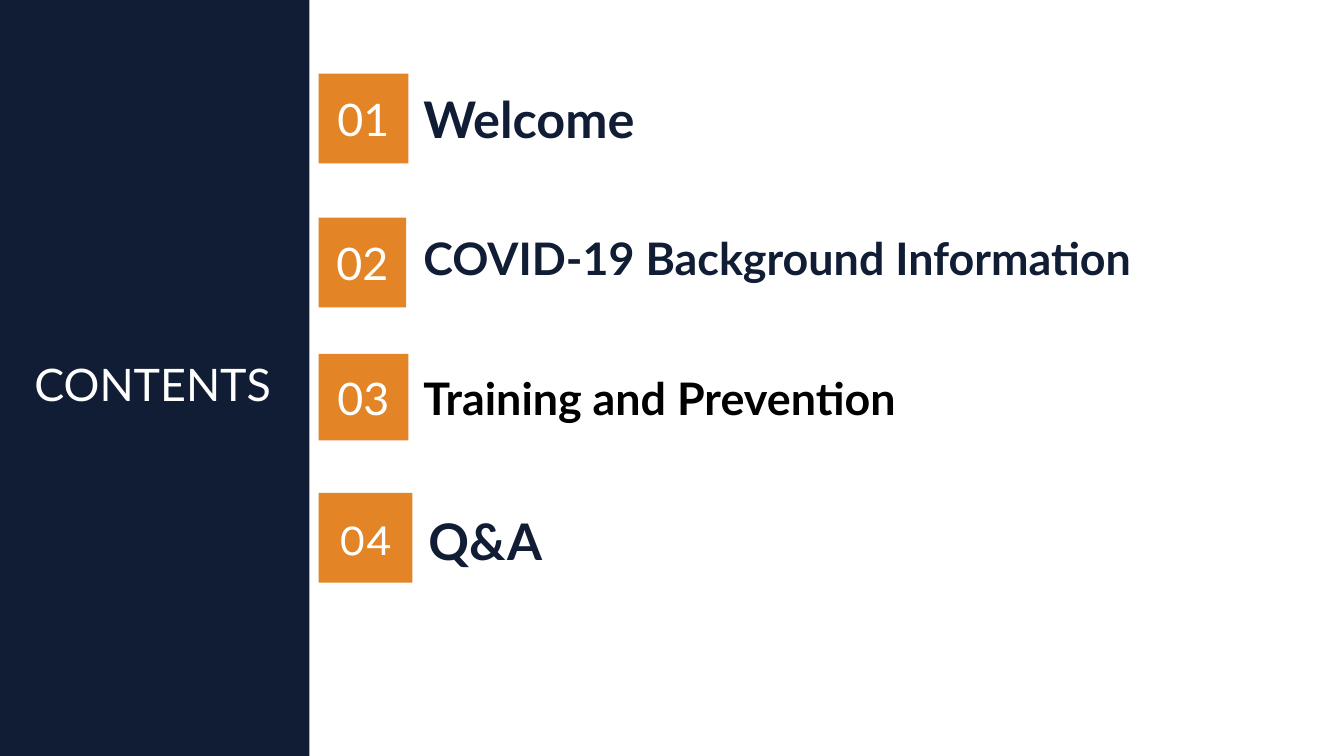
from pptx import Presentation
from pptx.dml.color import RGBColor
from pptx.enum.shapes import MSO_SHAPE as Shape
from pptx.enum.text import MSO_ANCHOR as Anchor, PP_ALIGN as Align

PX = 9144
NAVY, ORANGE, WHITE, BLACK = "101D35", "E38526", "FFFFFF", "000000"
AGENDA = [
    ("01", "Lato", (316, 73, 89, 89), "Welcome", 36, NAVY, (410, 73, 873, 89)),
    ("02", "Lato", (316, 216, 87, 89), "COVID-19 Background Information", 32, NAVY, (410, 211, 860, 89)),
    ("03", "Lato", (316, 351, 89, 86), "Training and Prevention", 32, BLACK, (410, 351, 873, 86)),
    ("04", "Karla", (316, 489, 93, 89), "Q&A", 36, NAVY, (415, 495, 910, 83)),
]


def rgb(value):
    """Turn a hex string into a colour."""
    return RGBColor.from_string(value)


def emu(box):
    """Turn a box in px into EMU lengths."""
    return [length * PX for length in box]


def write(holder, text, size, color, align, bold=False, font="Lato"):
    """Put one formatted line in the vertical middle of a shape."""
    frame = holder.text_frame
    frame.word_wrap = True
    frame.vertical_anchor = Anchor.MIDDLE
    line = frame.paragraphs[0]
    line.text = text
    line.alignment = align
    line.font.name = font
    line.font.size = size * 12700
    line.font.bold = bold
    line.font.color.rgb = rgb(color)


def add_block(slide, box, color):
    """Add a plain filled rectangle."""
    block = slide.shapes.add_shape(Shape.RECTANGLE, *emu(box))
    block.shadow.inherit = False
    block.fill.solid()
    block.fill.fore_color.rgb = rgb(color)
    block.line.fill.background()
    return block


def add_sidebar(slide, box):
    """Draw the navy panel behind the slide title."""
    left, top, width, height = box
    panel = add_block(slide, box, NAVY)
    heading = slide.shapes.title
    panel._element.addnext(heading._element)
    heading.left, heading.top, heading.width, heading.height = emu(
        (left, top + 349, width - 4, 64))
    write(heading, "CONTENTS", 32, WHITE, Align.CENTER)


def add_entry(slide, number, number_font, badge_box, topic, size, color, topic_box):
    """Add one numbered badge with its topic."""
    badge = add_block(slide, badge_box, ORANGE)
    write(badge, number, 32, WHITE, Align.CENTER, font=number_font)
    label = slide.shapes.add_textbox(*emu(topic_box))
    write(label, topic, size, color, Align.LEFT, bold=True)


def main():
    """Build and save the contents slide."""
    deck = Presentation()
    deck.slide_width, deck.slide_height = emu((1333, 750))
    slide = deck.slides.add_slide(deck.slide_layouts[5])
    add_sidebar(slide, (0, 0, 307, 750))
    for entry in AGENDA:
        add_entry(slide, *entry)
    deck.save("out.pptx")


if __name__ == "__main__":
    main()
